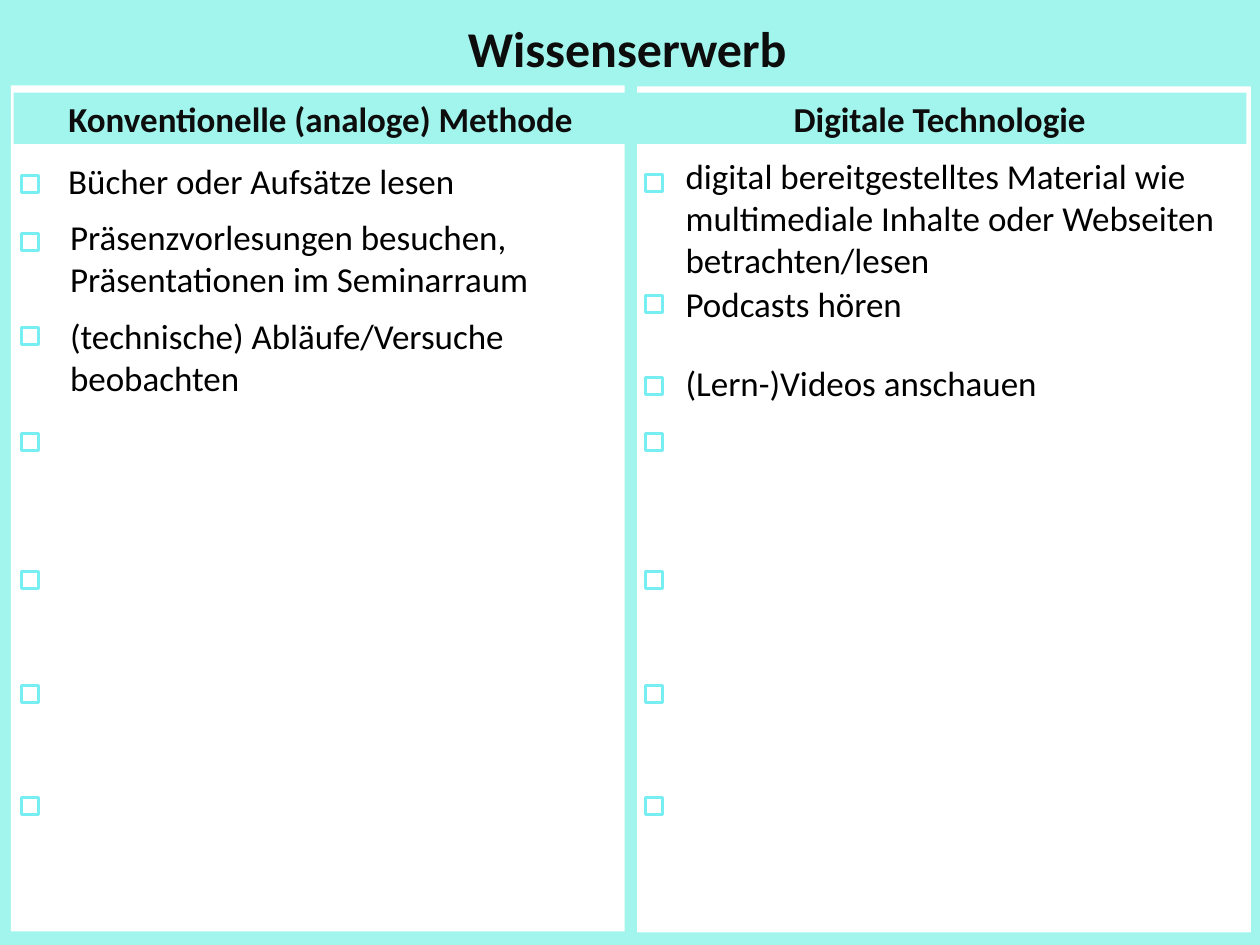
from pptx import Presentation
from pptx.dml.color import RGBColor
from pptx.enum.shapes import MSO_SHAPE
from pptx.enum.text import MSO_ANCHOR, MSO_AUTO_SIZE, PP_ALIGN
from pptx.util import Inches, Pt

RECT = MSO_SHAPE.RECTANGLE
TOP = MSO_ANCHOR.TOP
NO_FIT = MSO_AUTO_SIZE.NONE
LEFT, CENTER = PP_ALIGN.LEFT, PP_ALIGN.CENTER

AQUA = RGBColor(0xA1, 0xF5, 0xED)
CYAN = RGBColor(0x77, 0xEE, 0xF1)
WHITE = RGBColor(0xFF, 0xFF, 0xFF)
INK = RGBColor(0x0D, 0x0D, 0x0D)
BLACK = RGBColor(0x00, 0x00, 0x00)


class Page:
    font = "Calibri"
    size = 28

    def __init__(self, slide):
        self.slide = slide
        fill = slide.background.fill
        fill.solid()
        fill.fore_color.rgb = AQUA

    def label(self, shape, text, size, color, bold=False, align=LEFT, gap=0):
        frame = shape.text_frame
        frame.text = text
        frame.word_wrap = True
        frame.auto_size = NO_FIT
        frame.vertical_anchor = TOP
        para = frame.paragraphs[0]
        para.alignment = align
        para.space_before = para.space_after = Pt(gap)
        para.line_spacing = 1.0
        for run in para.runs:
            run.font.name = self.font
            run.font.size = Pt(size)
            run.font.bold = bold
            run.font.color.rgb = color

    def title(self, text, x, y, w, h):
        shape = self.slide.shapes.title
        shape.left, shape.top = Inches(x), Inches(y)
        shape.width, shape.height = Inches(w), Inches(h)
        self.label(shape, text, 40, INK, True, CENTER)

    def rect(self, x, y, w, h):
        shape = self.slide.shapes.add_shape(
            RECT, Inches(x), Inches(y), Inches(w), Inches(h))
        shape.shadow.inherit = False
        return shape

    def panel(self, x, y, w, h, color):
        shape = self.rect(x, y, w, h)
        shape.fill.solid()
        shape.fill.fore_color.rgb = color
        shape.line.fill.background()
        return shape

    def head(self, text, x, y, w, h):
        shape = self.panel(x, y, w, h, AQUA)
        self.label(shape, text, self.size, INK, True, CENTER)

    def item(self, text, x, y, w, h, gap):
        box = self.slide.shapes.add_textbox(
            Inches(x), Inches(y), Inches(w), Inches(h))
        self.label(box, text, self.size, BLACK, gap=gap)

    def check(self, x, y):
        shape = self.rect(x, y, 0.19, 0.19)
        shape.fill.background()
        shape.line.color.rgb = CYAN
        shape.line.width = Pt(2.25)


def main():
    deck = Presentation()
    deck.slide_width = Inches(14)
    deck.slide_height = Inches(10.5)
    page = Page(deck.slides.add_slide(deck.slide_layouts[5]))

    page.title("Wissenserwerb", 0.38, 0.14, 13.18, 0.77)

    wide = 6.82
    panels = [(0.12, 0.95), (7.08, 0.96)]
    heads = [("Konventionelle (analoge) Methode", 0.15),
             ("Digitale Technologie", 7.03)]
    for x, y in panels:
        page.panel(x, y, wide, 9.4, WHITE)
    for text, x in heads:
        page.head(text, x, 1.03, wide, 0.57)

    items = [
        ("Bücher oder Aufsätze lesen", 0.66, 1.72, 4.54, 0.57, 6),
        ("Präsenzvorlesungen besuchen, Präsentationen im Seminarraum",
         0.68, 2.34, 5.92, 1.04, 0),
        ("(technische) Abläufe/Versuche beobachten",
         0.68, 3.44, 5.92, 1.04, 0),
        ("digital bereitgestelltes Material wie multimediale Inhalte "
         "oder Webseiten betrachten/lesen", 7.52, 1.67, 6.23, 1.51, 6),
        ("Podcasts hören", 7.52, 3.09, 5.57, 0.57, 6),
        ("(Lern-)Videos anschauen", 7.52, 3.97, 5.23, 0.57, 0),
    ]
    for item in items:
        page.item(*item)

    free = [4.82, 6.35, 7.62, 8.86]
    checks = [(0.24, [1.95, 2.59, 3.64]), (7.17, [1.94, 3.28, 4.19])]
    for x, used in checks:
        for y in used + free:
            page.check(x, y)

    deck.save("out.pptx")


if __name__ == "__main__":
    main()
